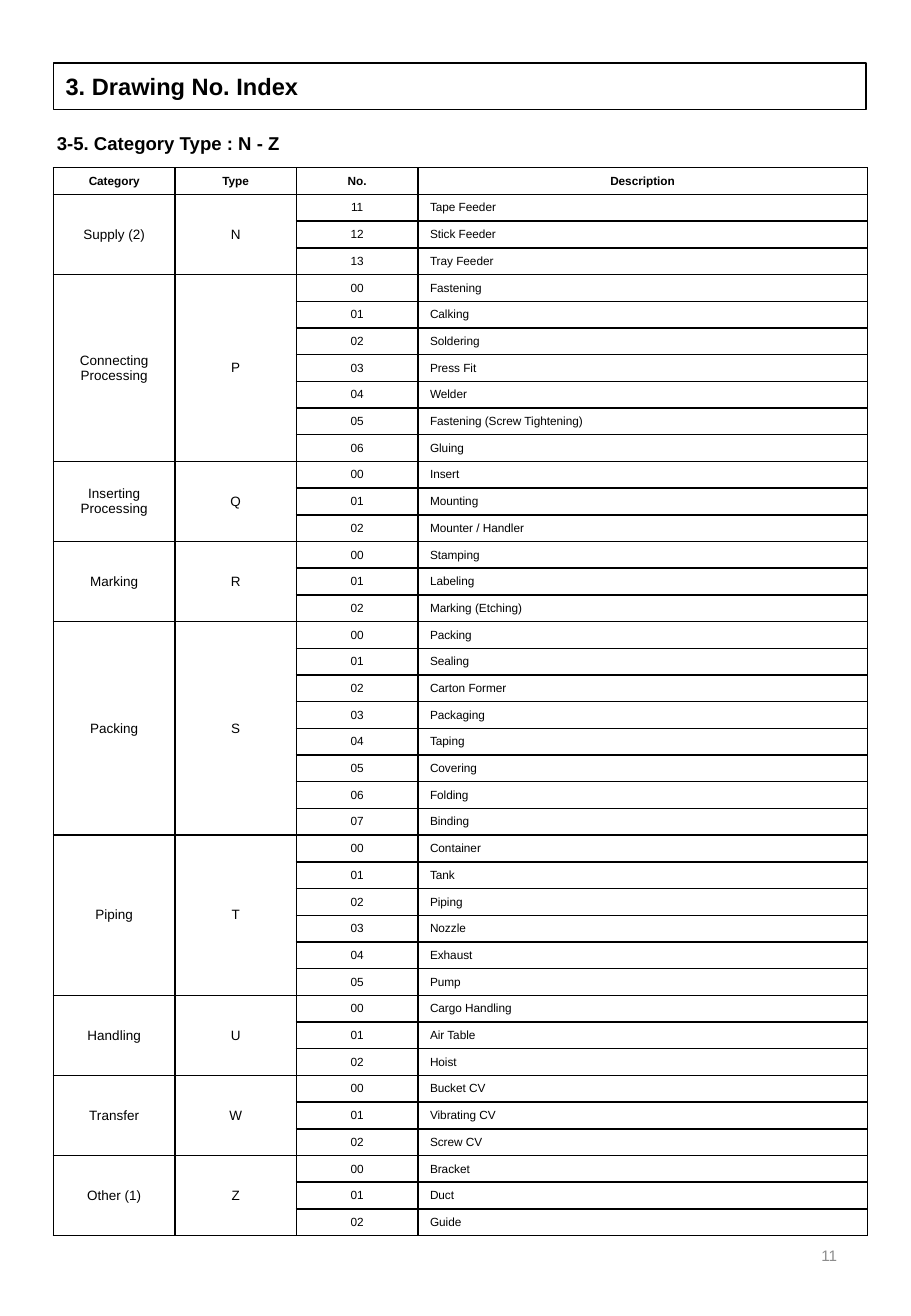
from lxml.etree import SubElement
from pptx import Presentation
from pptx.dml.color import RGBColor
from pptx.enum.text import MSO_ANCHOR, MSO_AUTO_SIZE, PP_ALIGN
from pptx.oxml.ns import qn
from pptx.util import Pt

COLORS = {"ink": "000000", "page": "8C8C8C"}
HEADS = ["Category", "Type", "No.", "Description"]
WIDTHS = [72, 72, 72, 266.4]
ROW = 15.84
# category, type, first number, descriptions
GROUPS = [
    ("Supply (2)", "N", 11, ["Tape Feeder", "Stick Feeder", "Tray Feeder"]),
    ("Connecting Processing", "P", 0,
     ["Fastening", "Calking", "Soldering", "Press Fit", "Welder",
      "Fastening (Screw Tightening)", "Gluing"]),
    ("Inserting Processing", "Q", 0, ["Insert", "Mounting", "Mounter / Handler"]),
    ("Marking", "R", 0, ["Stamping", "Labeling", "Marking (Etching)"]),
    ("Packing", "S", 0,
     ["Packing", "Sealing", "Carton Former", "Packaging", "Taping",
      "Covering", "Folding", "Binding"]),
    ("Piping", "T", 0,
     ["Container", "Tank", "Piping", "Nozzle", "Exhaust", "Pump"]),
    ("Handling", "U", 0, ["Cargo Handling", "Air Table", "Hoist"]),
    ("Transfer", "W", 0, ["Bucket CV", "Vibrating CV", "Screw CV"]),
    ("Other (1)", "Z", 0, ["Bracket", "Duct", "Guide"]),
]


class Sheet:
    font = "Arial"

    def __init__(self, deck):
        self.slide = deck.slides.add_slide(deck.slide_layouts[5])

    def words(self, frame, text, size, bold=False, align=PP_ALIGN.LEFT, color="ink"):
        frame.text = text
        frame.word_wrap = True
        para = frame.paragraphs[0]
        para.alignment = align
        font = para.runs[0].font
        font.name, font.size, font.bold = self.font, Pt(size), bold
        font.color.rgb = RGBColor.from_string(COLORS[color])

    def title(self, text, left, top, width, height):
        box = self.slide.shapes.title
        box.left, box.top, box.width, box.height = map(Pt, (left, top, width, height))
        box.line.color.rgb = RGBColor.from_string(COLORS["ink"])
        box.line.width = Pt(1)
        self.words(box.text_frame, text, 14, True)
        box.text_frame.auto_size = MSO_AUTO_SIZE.NONE
        box.text_frame.vertical_anchor = MSO_ANCHOR.MIDDLE

    def label(self, text, left, top, width, height, size,
              anchor=MSO_ANCHOR.TOP, **style):
        box = self.slide.shapes.add_textbox(*map(Pt, (left, top, width, height)))
        self.words(box.text_frame, text, size, **style)
        box.text_frame.vertical_anchor = anchor

    def table(self, left, top, widths, count):
        frame = self.slide.shapes.add_table(
            count, len(widths), Pt(left), Pt(top), Pt(sum(widths)), Pt(ROW * count))
        grid = frame.table
        grid.first_row = grid.horz_banding = False
        for col, width in zip(grid.columns, widths):
            col.width = Pt(width)
        for row in grid.rows:
            row.height = Pt(ROW)
            for cell in row.cells:
                self.frame(cell)
        return grid

    def frame(self, cell):
        """Give a cell black borders, no fill and no vertical padding."""
        cell.margin_top = cell.margin_bottom = 0
        cell.vertical_anchor = MSO_ANCHOR.MIDDLE
        props = cell._tc.get_or_add_tcPr()
        for side in ("L", "R", "T", "B"):
            line = SubElement(props, qn(f"a:ln{side}"), w=str(Pt(1)))
            fill = SubElement(line, qn("a:solidFill"))
            SubElement(fill, qn("a:srgbClr"), val=COLORS["ink"])
        cell.fill.background()
        # keeps an empty merged cell from stretching its row
        cell.text_frame.paragraphs[0].font.size = Pt(7)

    def cell(self, grid, row, col, text, size=7, bold=False,
             align=PP_ALIGN.CENTER, span=1):
        cell = grid.cell(row, col)
        if span > 1:
            cell.merge(grid.cell(row + span - 1, col))
        self.words(cell.text_frame, text, size, bold, align)


def main():
    deck = Presentation()
    deck.slide_width, deck.slide_height = Pt(540), Pt(779.76)
    sheet = Sheet(deck)
    sheet.title("3. Drawing No. Index", 31.7, 37.5, 481.7, 27.4)
    sheet.label("3-5. Category Type : N - Z", 26.6, 74.9, 330.5, 20.9, 11, bold=True)

    count = 1 + sum(len(group[3]) for group in GROUPS)
    grid = sheet.table(31.7, 99.4, WIDTHS, count)
    for col, head in enumerate(HEADS):
        sheet.cell(grid, 0, col, head, bold=True)
    row = 1
    for name, kind, first, items in GROUPS:
        for col, text in enumerate((name, kind)):
            sheet.cell(grid, row, col, text, 8, span=len(items))
        for num, item in enumerate(items, first):
            sheet.cell(grid, row, 2, f"{num:02d}")
            sheet.cell(grid, row, 3, item, align=PP_ALIGN.LEFT)
            row += 1

    sheet.label("11", 381.6, 722.9, 121.7, 41.8, 9, MSO_ANCHOR.MIDDLE,
                align=PP_ALIGN.RIGHT, color="page")
    deck.save("out.pptx")


if __name__ == "__main__":
    main()
